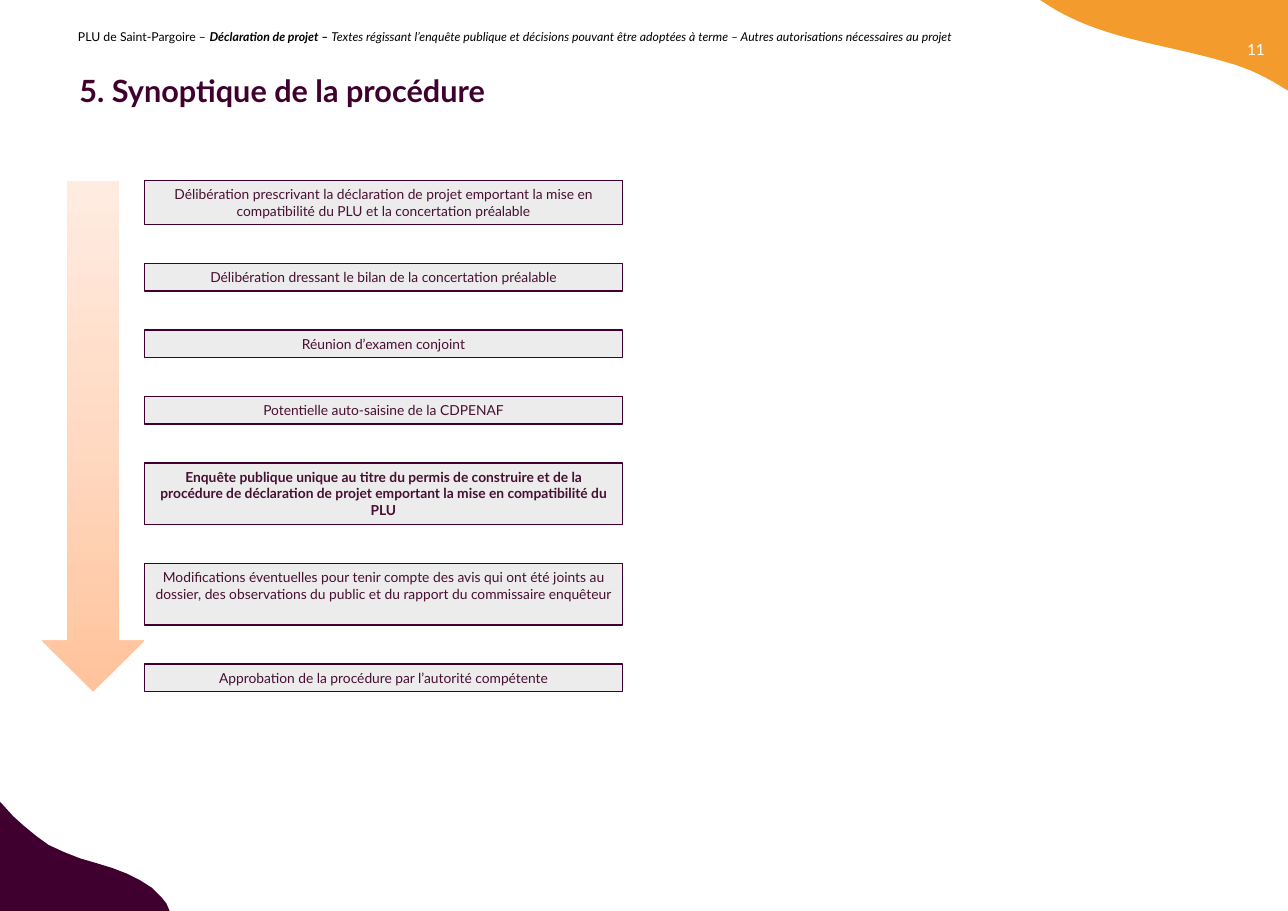
from copy import deepcopy

from pptx import Presentation
from pptx.dml.color import RGBColor
from pptx.enum.shapes import MSO_SHAPE
from pptx.enum.text import MSO_ANCHOR, PP_ALIGN
from pptx.oxml.ns import qn
from pptx.util import Inches, Pt

RECT, ARROW = MSO_SHAPE.RECTANGLE, MSO_SHAPE.DOWN_ARROW
TOP, MIDDLE = MSO_ANCHOR.TOP, MSO_ANCHOR.MIDDLE
LEFT, CENTER = PP_ALIGN.LEFT, PP_ALIGN.CENTER


class Theme:
    font = "Lato"
    plum = RGBColor.from_string("40002F")
    ink = RGBColor.from_string("470F32")
    orange = RGBColor.from_string("F49B2D")
    grey = RGBColor.from_string("ECECEC")
    black = RGBColor.from_string("000000")
    white = RGBColor.from_string("FFFFFF")
    fade = [RGBColor.from_string(c) for c in ("FFC39B", "FFD9C2", "FFECE1")]
    title, page, step, head = Pt(20), Pt(10), Pt(9), Pt(8)


def style(shape, size, color, align, anchor=TOP, bold=False):
    frame = shape.text_frame
    frame.word_wrap = True
    frame.vertical_anchor = anchor
    para = frame.paragraphs[0]
    para.alignment = align
    font = para.font
    font.name, font.size, font.bold = Theme.font, size, bold
    font.color.rgb = color


def blob(points, color):
    points = [(Inches(x), Inches(y)) for x, y in points]
    build = slide.shapes.build_freeform(*points[0])
    build.add_line_segments(points[1:])
    shape = build.convert_to_shape()
    shape.shadow.inherit = False
    shape.fill.solid()
    shape.fill.fore_color.rgb = color
    shape.line.fill.background()


deck = Presentation()
wide, high = 11.69, 8.27
deck.slide_width, deck.slide_height = Inches(wide), Inches(high)
slide = deck.slides.add_slide(deck.slide_layouts[5])
shapes = slide.shapes

# Orange corner: sampled curves, kept to the page
curves = [
    [(12.1, 1.13), (11.8, 0.89), (11.51, 0.67), (11.15, 0.57)],
    [(11.15, 0.57), (10.49, 0.37), (9.79, 0.35), (9.26, -0.15)],
]
wave = [(wide, 0), (wide, 0.82)]
for a, b, c, d in curves:
    for n in range(31):
        t = n / 30
        x, y = [(1 - t) ** 3 * p + 3 * t * (1 - t) ** 2 * q
                + 3 * t ** 2 * (1 - t) * r + t ** 3 * s
                for p, q, r, s in zip(a, b, c, d)]
        if x < wide and y > 0:
            wave.append((x, y))
blob(wave + [(9.44, 0)], Theme.orange)

# Plum corner
blob([(0, high), (0, 7.28), (0.03, 7.31), (0.12, 7.41), (0.22, 7.5),
      (0.33, 7.59), (0.44, 7.67), (0.57, 7.73), (0.72, 7.79), (0.89, 7.84),
      (1.02, 7.88), (1.15, 7.93), (1.27, 7.99), (1.38, 8.06), (1.47, 8.15),
      (1.51, 8.2), (1.54, high)], Theme.plum)

# Page number and running head
page = shapes.add_textbox(Inches(11.11), Inches(0.32), Inches(0.58), Inches(0.27))
page.text_frame.text = "11"
style(page, Theme.page, Theme.white, CENTER)

head = shapes.add_textbox(Inches(0.61), Inches(0.22), Inches(9.3), Inches(0.24))
for text, bold, slant in [
    ("PLU de Saint-Pargoire – ", False, False),
    ("Déclaration de projet – ", True, True),
    ("Textes régissant l’enquête publique et décisions pouvant être adoptées "
     "à terme – Autres autorisations nécessaires au projet", False, True),
]:
    run = head.text_frame.paragraphs[0].add_run()
    run.text = text
    run.font.bold, run.font.italic = bold, slant
style(head, Theme.head, Theme.black, LEFT)

# Title
title = shapes.title
title.left, title.top = Inches(0.62), Inches(0.6)
title.width, title.height = Inches(7.39), Inches(0.44)
title.text_frame.text = "5. Synoptique de la procédure"
style(title, Theme.title, Theme.plum, LEFT, MIDDLE, True)

# Time arrow, darker towards its tip
first, last = 1.64, 6.28
arrow = shapes.add_shape(ARROW, Inches(0.38), Inches(first), Inches(0.93), Inches(last - first))
arrow.shadow.inherit = False
arrow.line.fill.background()
arrow.fill.gradient()
arrow.fill.gradient_angle = 90
stops = arrow._element.spPr.find(qn("a:gradFill")).find(qn("a:gsLst"))
stops.insert(1, deepcopy(stops[0]))
for stop, color, place in zip(arrow.fill.gradient_stops, Theme.fade, (0, 0.5, 1)):
    stop.color.rgb, stop.position = color, place

# Steps: text, height, bold, with equal gaps
steps = [
    ("Délibération prescrivant la déclaration de projet emportant la mise en "
     "compatibilité du PLU et la concertation préalable", 0.4, False),
    ("Délibération dressant le bilan de la concertation préalable", 0.25, False),
    ("Réunion d’examen conjoint", 0.25, False),
    ("Potentielle auto-saisine de la CDPENAF", 0.25, False),
    ("Enquête publique unique au titre du permis de construire et de la procédure "
     "de déclaration de projet emportant la mise en compatibilité du PLU", 0.56, True),
    ("Modifications éventuelles pour tenir compte des avis qui ont été joints au "
     "dossier, des observations du public et du rapport du commissaire enquêteur",
     0.56, False),
    ("Approbation de la procédure par l’autorité compétente", 0.25, False),
]
gap = (last - first - sum(tall for _, tall, _ in steps)) / (len(steps) - 1)
y = first
for text, tall, bold in steps:
    box = shapes.add_shape(RECT, Inches(1.31), Inches(y), Inches(4.34), Inches(tall))
    box.shadow.inherit = False
    box.fill.solid()
    box.fill.fore_color.rgb = Theme.grey
    box.line.color.rgb = Theme.plum
    box.line.width = Pt(1)
    box.text_frame.text = text
    style(box, Theme.step, Theme.ink, CENTER, bold=bold)
    y += tall + gap

deck.save("out.pptx")
